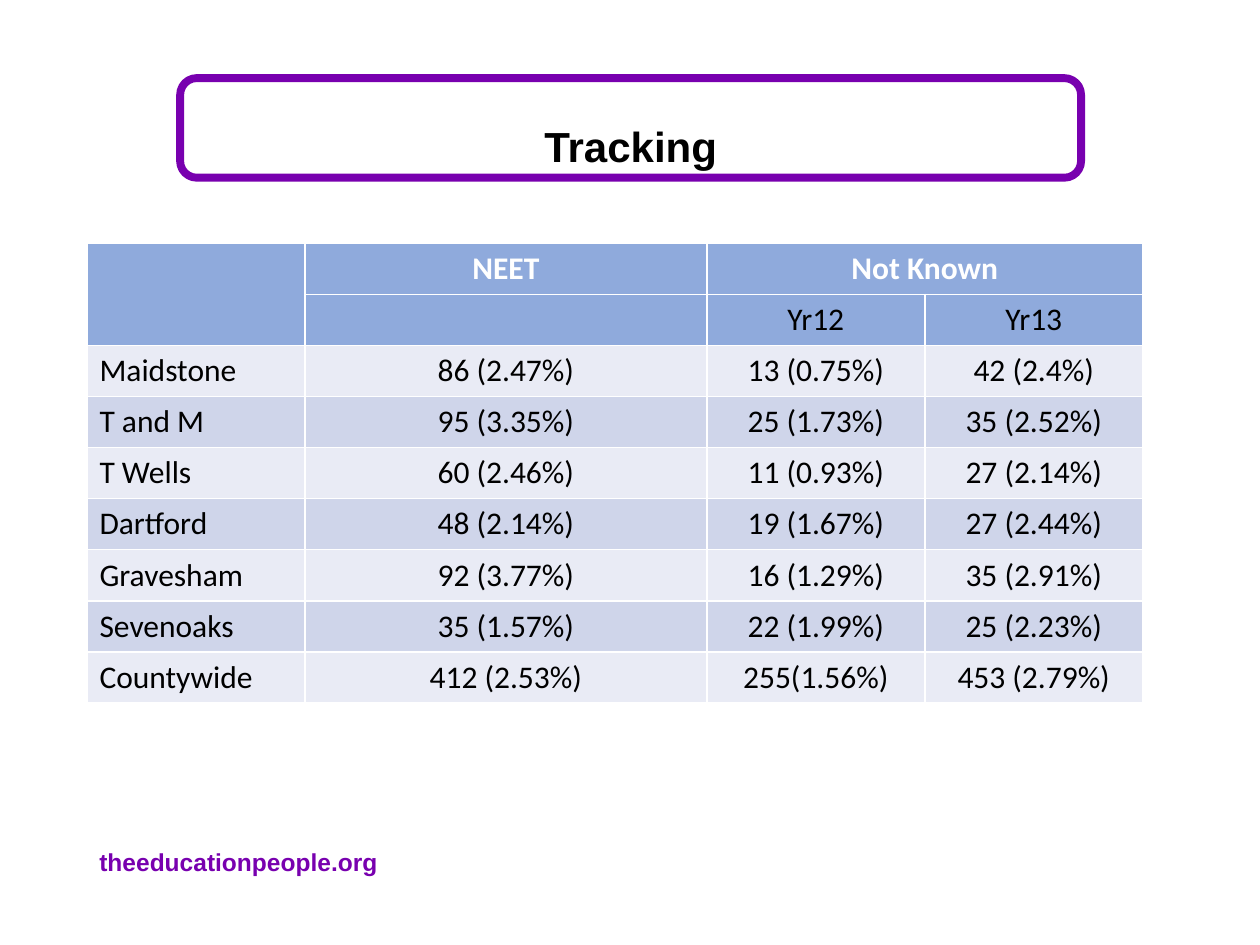
from pptx import Presentation
from pptx import util as u
from pptx.dml.color import RGBColor
from pptx.enum import shapes, text

COLORS = {
    "purple": "7800AF",
    "black": "000000",
    "white": "FFFFFF",
    "header": "8FAADC",
    "light": "E9EBF5",
    "dark": "CFD5EA",
}

HEADER_ROWS = [
    ("", "NEET", "Not Known", ""),
    ("", "", "Yr12", "Yr13"),
]
AREA_ROWS = [
    ("Maidstone", "86 (2.47%)", "13 (0.75%)", "42 (2.4%)"),
    ("T and M", "95 (3.35%)", "25 (1.73%)", "35 (2.52%)"),
    ("T Wells", "60 (2.46%)", "11 (0.93%)", "27 (2.14%)"),
    ("Dartford", "48 (2.14%)", "19 (1.67%)", "27 (2.44%)"),
    ("Gravesham", "92 (3.77%)", "16 (1.29%)", "35 (2.91%)"),
    ("Sevenoaks", "35 (1.57%)", "22 (1.99%)", "25 (2.23%)"),
    ("Countywide", "412 (2.53%)", "255(1.56%)", "453 (2.79%)"),
]
COLUMN_WIDTHS = (1.73, 3.19, 1.73, 1.73)
ROW_HEIGHT = 3.65 / 9
TITLE_AREA = (1.43, 0.62, 7.15, 0.79)


class SlideBuilder:
    """Holds the style and the current slide."""

    heading_font = "Arial"
    table_font = "Calibri"

    def __init__(self, page):
        self.page = page

    def color(self, name):
        return RGBColor.from_string(COLORS[name])

    def style(self, para, font, size, color, bold=False, align=text.PP_ALIGN.LEFT):
        para.alignment = align
        para.font.name = font
        para.font.size = u.Pt(size)
        para.font.bold = bold
        para.font.color.rgb = self.color(color)

    def frame(self, area, color, width):
        box = self.page.shapes.add_shape(
            shapes.MSO_SHAPE.ROUNDED_RECTANGLE, *map(u.Inches, area))
        box.shadow.inherit = False
        box.fill.background()
        box.line.color.rgb = self.color(color)
        box.line.width = u.Pt(width)

    def label(self, area, words, size, color, align=text.PP_ALIGN.LEFT,
              anchor=text.MSO_ANCHOR.TOP, spacing=1.0):
        box = self.page.shapes.add_textbox(*map(u.Inches, area))
        box.text_frame.word_wrap = True
        box.text_frame.vertical_anchor = anchor
        para = box.text_frame.paragraphs[0]
        para.text = words
        para.line_spacing = spacing
        self.style(para, self.heading_font, size, color, True, align)

    def table(self, left, top, widths, row_height, headers, body):
        rows = headers + body
        table = self.page.shapes.add_table(
            len(rows), len(widths), u.Inches(left), u.Inches(top),
            u.Inches(sum(widths)), u.Inches(row_height * len(rows))).table
        for column, width in zip(table.columns, widths):
            column.width = u.Inches(width)
        for r, values in enumerate(rows):
            table.rows[r].height = u.Inches(row_height)
            if r < len(headers):
                fill = "header"
            else:
                fill = "dark" if r % 2 else "light"
            for c, value in enumerate(values):
                self.cell(table.cell(r, c), value, fill, r == 0, c > 0)
        return table

    def cell(self, cell, value, fill, top_row, centred):
        cell.fill.solid()
        cell.fill.fore_color.rgb = self.color(fill)
        para = cell.text_frame.paragraphs[0]
        if value:
            para.text = value
        self.style(para, self.table_font, 18, "white" if top_row else "black", top_row,
                   text.PP_ALIGN.CENTER if centred else text.PP_ALIGN.LEFT)


def main():
    deck = Presentation()
    deck.slide_width, deck.slide_height = u.Inches(10), u.Inches(7.5)
    builder = SlideBuilder(deck.slides.add_slide(deck.slide_layouts[6]))

    # Footer address
    builder.label((0.69, 6.67, 2.48, 0.34), "theeducationpeople.org", 14, "purple")

    # Framed title
    builder.frame(TITLE_AREA, "purple", 4.5)
    builder.label(TITLE_AREA, "Tracking", 24, "black", text.PP_ALIGN.CENTER,
                  text.MSO_ANCHOR.BOTTOM, 0.9)

    # Tracking figures by area
    table = builder.table(0.69, 1.93, COLUMN_WIDTHS, ROW_HEIGHT, HEADER_ROWS, AREA_ROWS)
    table.cell(0, 0).merge(table.cell(1, 0))
    table.cell(0, 2).merge(table.cell(0, 3))

    deck.save("out.pptx")


if __name__ == "__main__":
    main()
